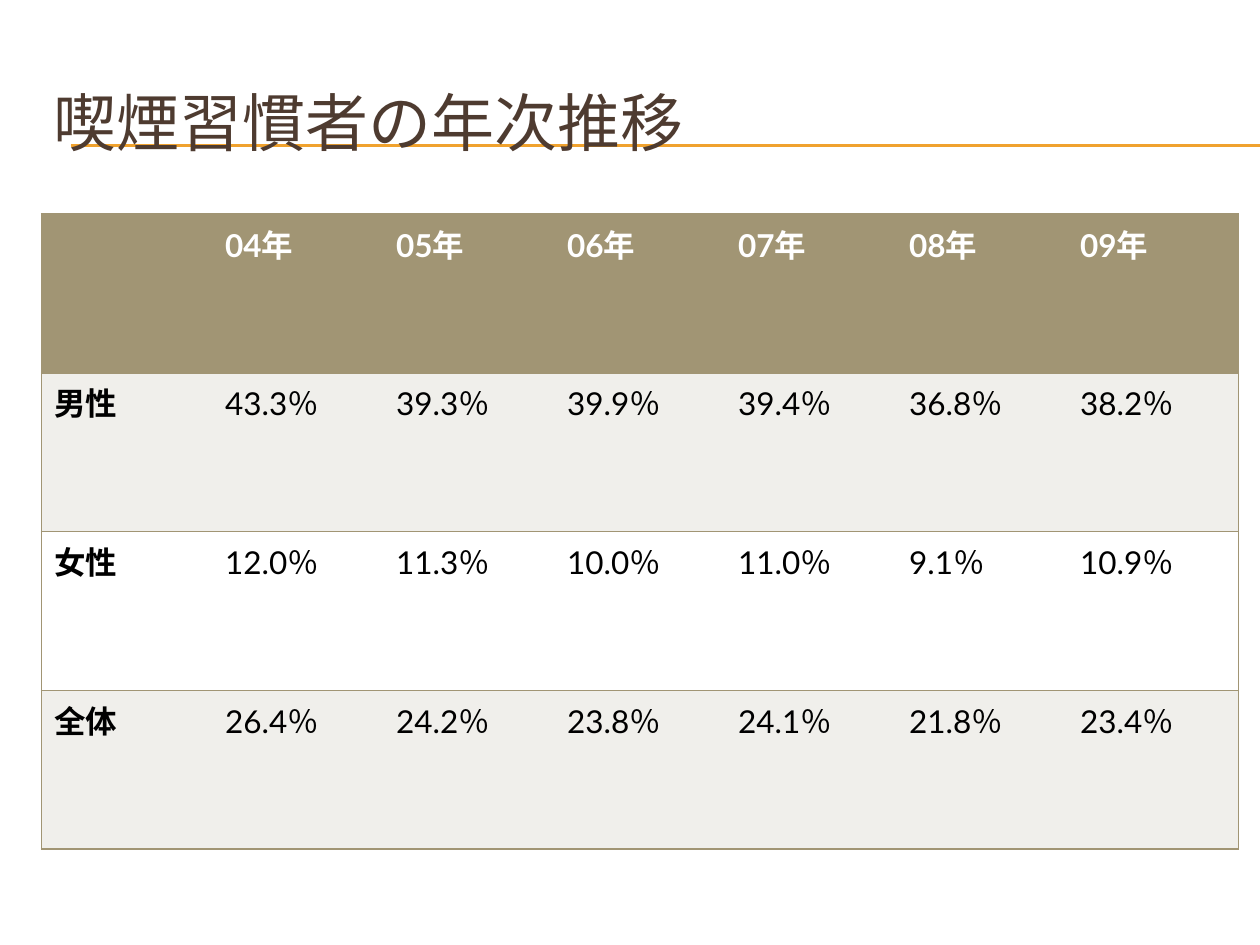
import pptx
import pptx.dml.color
import pptx.enum.shapes
import pptx.enum.text
import pptx.oxml
import pptx.oxml.ns
import pptx.util
from pptx.util import Inches

RGBColor = pptx.dml.color.RGBColor
ORANGE = RGBColor(0xF0, 0xA2, 0x2E)
BROWN = RGBColor(0x4E, 0x3B, 0x30)
KHAKI = RGBColor(0xA1, 0x95, 0x74)
PALE = RGBColor(0xF0, 0xEF, 0xEB)
WHITE = RGBColor(0xFF, 0xFF, 0xFF)
BLACK = RGBColor(0, 0, 0)

TITLE = "喫煙習慣者の年次推移"
RATES = [
    ["", "04年", "05年", "06年", "07年", "08年", "09年"],
    ["男性", "43.3％", "39.3％", "39.9％", "39.4％", "36.8％", "38.2％"],
    ["女性", "12.0％", "11.3％", "10.0％", "11.0％", "9.1％", "10.9％"],
    ["全体", "26.4％", "24.2％", "23.8％", "24.1％", "21.8％", "23.4％"],
]


def write_text(tf, text, size, color, bold=False):
    r = tf.paragraphs[0].add_run()
    r.text = text
    r.font.color.rgb = color
    style = {"name": "Lato", "size": pptx.util.Pt(size), "bold": bold}
    for name, value in style.items():
        setattr(r.font, name, value)


def add_rules(slide, left, right, tops):
    for top in tops:
        line = slide.shapes.add_connector(
            pptx.enum.shapes.MSO_CONNECTOR.STRAIGHT,
            Inches(left), Inches(top), Inches(right), Inches(top))
        line.line.color.rgb = ORANGE
        line.line.width = pptx.util.Pt(0.75)
        pptx.oxml.ns.qn("a:effectLst")
        line._element.spPr.append(pptx.oxml.parse_xml(
            f"<a:effectLst {pptx.oxml.ns.nsdecls('a')}/>"))


def add_title(slide, left, top, width, height):
    sp = slide.shapes.add_textbox(
        Inches(left), Inches(top), Inches(width), Inches(height))
    tf = sp.text_frame
    tf.word_wrap = True
    tf.vertical_anchor = pptx.enum.text.MSO_ANCHOR.MIDDLE
    write_text(tf, TITLE, 36, BROWN)


def set_borders(cell, sides):
    """Draw the given sides (of L, R, T, B) and clear the others."""
    tc_pr = cell._tc.get_or_add_tcPr()
    for i, side in enumerate("LRTB"):
        fill = (f'<a:solidFill><a:srgbClr val="{KHAKI}"/></a:solidFill>'
                if side in sides else "<a:noFill/>")
        tc_pr.insert(i, pptx.oxml.parse_xml(
            f"<a:ln{side} {pptx.oxml.ns.nsdecls('a')} "
            f'w="{pptx.util.Pt(1)}">{fill}</a:ln{side}>'))


def add_rate_table(slide, left, top, width, height):
    n_rows, n_cols = len(RATES), len(RATES[0])
    table = slide.shapes.add_table(
        n_rows, n_cols, Inches(left), Inches(top),
        Inches(width), Inches(height)).table
    for i, row in enumerate(RATES):
        for j, text in enumerate(row):
            cell = table.cell(i, j)
            cell.fill.solid()
            cell.fill.fore_color.rgb = (
                KHAKI if i == 0 else PALE if i % 2 else WHITE)
            sides = "TB" + "L" * (j == 0) + "R" * (j == n_cols - 1)
            set_borders(cell, sides)
            if text:
                write_text(cell.text_frame, text, 18,
                           BLACK if i else WHITE, bold=i == 0 or j == 0)


def main():
    prs = pptx.Presentation()
    prs.slide_width, prs.slide_height = Inches(10), Inches(7.5)
    slide = prs.slides.add_slide(prs.slide_layouts[6])
    add_rules(slide, 0.56, 10, [1.15, 1.16])
    add_title(slide, 0.33, 0.5, 9.5, 0.92)
    add_rate_table(slide, 0.33, 1.7, 9.5, 5.04)
    prs.save("out.pptx")


if __name__ == "__main__":
    main()
